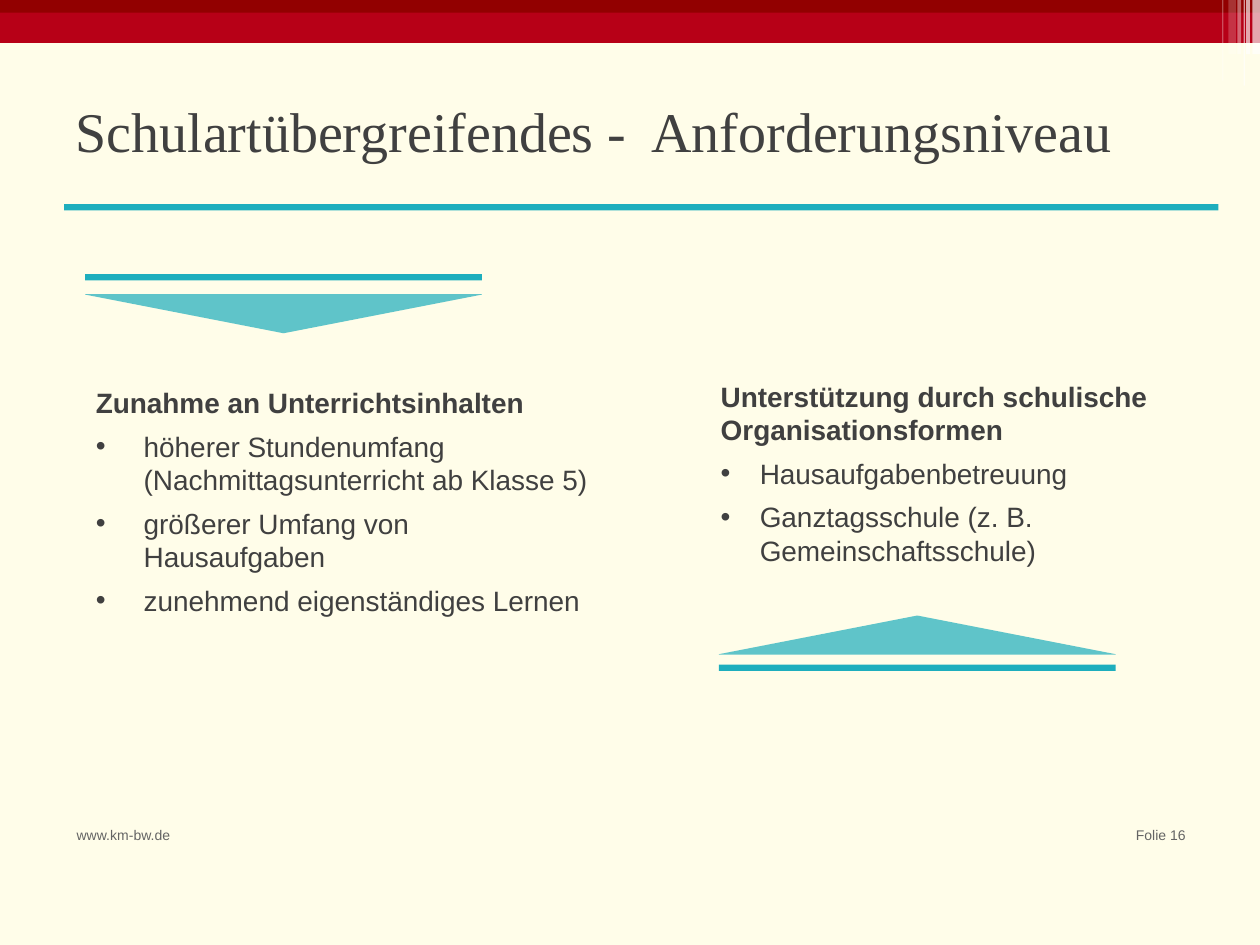
from dataclasses import dataclass

from lxml import etree
from pptx import Presentation
from pptx import util as u
from pptx.dml.color import RGBColor
from pptx.enum import shapes, text
from pptx.oxml import ns


@dataclass(frozen=True)
class Theme:
    background: str = "FFFDE9"
    red: str = "B70017"
    dark_red: str = "920000"
    white: str = "FFFFFF"
    teal: str = "1EAEBD"
    ink: str = "404040"
    gray: str = "646464"
    title_font: str = "Times New Roman"
    body_font: str = "Arial"
    title_size: int = 32
    body_size: int = 16
    footer_size: int = 8


theme = Theme()

presentation = Presentation()
presentation.slide_width = u.Inches(10)
presentation.slide_height = u.Inches(7.5)
slide = presentation.slides.add_slide(presentation.slide_layouts[3])
slide.background.fill.solid()
slide.background.fill.fore_color.rgb = RGBColor.from_string(theme.background)


def add_block(box, color, opacity=100, kind=shapes.MSO_SHAPE.RECTANGLE):
    """Add a shape without outline; box is left, top, width, height in inches."""
    shape = slide.shapes.add_shape(kind, *map(u.Inches, box))
    shape.shadow.inherit = False
    shape.line.fill.background()
    shape.fill.solid()
    shape.fill.fore_color.rgb = RGBColor.from_string(color)
    if opacity < 100:
        color_element = shape.fill._xPr.find(".//" + ns.qn("a:srgbClr"))
        etree.SubElement(color_element, ns.qn("a:alpha"), val=str(opacity * 1000))
    return shape


def add_run(paragraph, words, font_name, size, color, bold=False):
    run = paragraph.add_run()
    run.text = words
    run.font.name = font_name
    run.font.size = u.Pt(size)
    run.font.bold = bold
    run.font.color.rgb = RGBColor.from_string(color)


# Header band with light stripes at the right edge
add_block((0, 0, 10, 0.34), theme.red)
add_block((0, 0, 10, 0.1), theme.dark_red)
stripes = [
    (9.89, 0.03, 0.43, 65),
    (9.94, 0.06, 0.43, 65),
    (9.7, 0.01, 0.64, 30),
    (9.87, 0.01, 0.68, 60),
    (9.75, 0.06, 0.43, 20),
    (9.82, 0.03, 0.43, 40),
]
for left, width, height, opacity in stripes:
    add_block((left, 0, width, height), theme.white, opacity)

# Footer
footers = [
    ("www.km-bw.de", 0.51, 1, text.PP_ALIGN.LEFT),
    ("Folie 16", 8.54, 0.97, text.PP_ALIGN.RIGHT),
]
for words, left, width, alignment in footers:
    footer = slide.shapes.add_textbox(
        u.Inches(left), u.Inches(6.51), u.Inches(width), u.Inches(0.39))
    footer.text_frame.word_wrap = True
    paragraph = footer.text_frame.paragraphs[0]
    paragraph.alignment = alignment
    add_run(paragraph, words, theme.body_font, theme.footer_size, theme.gray)

# Title and the rule below it
title = slide.shapes.title
title.left, title.top, title.width, title.height = map(u.Inches, (0.5, 0.72, 9, 0.62))
title.text_frame.auto_size = text.MSO_AUTO_SIZE.NONE
title.text_frame.vertical_anchor = text.MSO_ANCHOR.MIDDLE
paragraph = title.text_frame.paragraphs[0]
paragraph.alignment = text.PP_ALIGN.LEFT
add_run(paragraph, "Schulartübergreifendes -  Anforderungsniveau",
        theme.title_font, theme.title_size, theme.ink)
add_block((0.51, 1.62, 9.16, 0.05), theme.teal)

# Two lists: placeholder, box, bullet indent, heading, items made of lines
columns = [
    (1, (0.67, 2.88, 4.09, 2.2), 0.38, "Zunahme an Unterrichtsinhalten", [
        ["höherer Stundenumfang", "(Nachmittagsunterricht ab Klasse 5)"],
        ["größerer Umfang von Hausaufgaben"],
        ["zunehmend eigenständiges Lernen"],
    ]),
    (2, (5.63, 2.97, 3.78, 1.57), 0.31,
     "Unterstützung durch schulische Organisationsformen", [
        ["Hausaufgabenbetreuung"],
        ["Ganztagsschule (z. B. Gemeinschaftsschule)"],
    ]),
]
for index, box, indent, heading, items in columns:
    body = slide.placeholders[index]
    body.left, body.top, body.width, body.height = map(u.Inches, box)
    frame = body.text_frame
    frame.auto_size = text.MSO_AUTO_SIZE.NONE
    frame.vertical_anchor = text.MSO_ANCHOR.MIDDLE
    frame.margin_left = frame.margin_right = u.Inches(0.09)
    frame.margin_top = frame.margin_bottom = u.Inches(0.09)
    for number, lines in enumerate([[heading], *items]):
        is_heading = number == 0
        paragraph = frame.paragraphs[0] if is_heading else frame.add_paragraph()
        properties = paragraph._p.get_or_add_pPr()
        hang = 0 if is_heading else u.Inches(indent)
        properties.set("marL", str(hang))
        properties.set("indent", str(-hang))
        if is_heading:
            etree.SubElement(properties, ns.qn("a:buNone"))
        else:
            etree.SubElement(properties, ns.qn("a:buFont"), typeface=theme.body_font)
            etree.SubElement(properties, ns.qn("a:buChar"), char="•")
        paragraph.space_before = u.Pt(0)
        paragraph.space_after = u.Pt(0.35 * theme.body_size)
        for line_number, line in enumerate(lines):
            if line_number:
                paragraph.add_line_break()
            add_run(paragraph, line, theme.body_font, theme.body_size,
                    theme.ink, is_heading)

# Flat arrows with a bar behind each: centre x, arrow centre y, bar centre y, turn
arrow_length, arrow_depth, bar_depth = 3.15, 0.31, 0.05
for center, arrow_y, bar_y, turn in [(2.25, 2.49, 2.2, 90), (7.28, 5.04, 5.3, 270)]:
    arrow = add_block(
        (center - arrow_depth / 2, arrow_y - arrow_length / 2, arrow_depth, arrow_length),
        theme.teal, 71, shapes.MSO_SHAPE.PENTAGON)
    arrow.adjustments[0] = 0.99
    arrow.rotation = turn
    add_block(
        (center - arrow_length / 2, bar_y - bar_depth / 2, arrow_length, bar_depth),
        theme.teal)

presentation.save("out.pptx")
